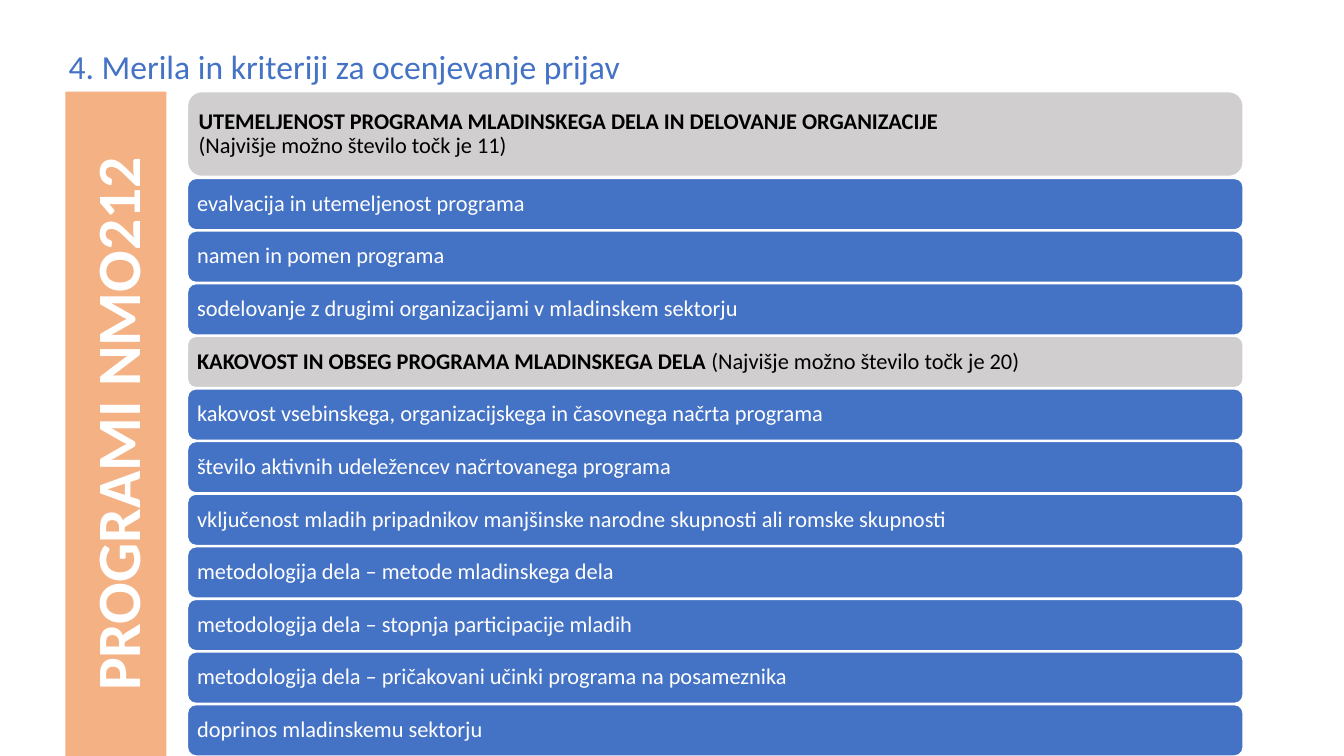
from pptx import Presentation
from pptx.dml.color import RGBColor
from pptx.enum.shapes import MSO_SHAPE
from pptx.enum.text import MSO_ANCHOR, MSO_AUTO_SIZE, PP_ALIGN
from pptx.util import Inches, Pt

RECTANGLE = MSO_SHAPE.RECTANGLE
ROUNDED = MSO_SHAPE.ROUNDED_RECTANGLE
TOP, MIDDLE = MSO_ANCHOR.TOP, MSO_ANCHOR.MIDDLE
LEFT, CENTER = PP_ALIGN.LEFT, PP_ALIGN.CENTER
NO_AUTOFIT = MSO_AUTO_SIZE.NONE

BLUE = RGBColor(0x44, 0x72, 0xC4)
GREY = RGBColor(0xD0, 0xCE, 0xCE)
ORANGE = RGBColor(0xF4, 0xB1, 0x83)
WHITE = RGBColor(0xFF, 0xFF, 0xFF)
BLACK = RGBColor(0x00, 0x00, 0x00)
FONT = "Calibri"

TITLE = "4. Merila in kriteriji za ocenjevanje prijav"
BAND = "PROGRAMI NMO212"
FIRST_HEADING = [
    [("UTEMELJENOST PROGRAMA MLADINSKEGA DELA IN DELOVANJE ORGANIZACIJE", True)],
    [("(Najvišje možno število točk je 11)", False)],
]
SECOND_HEADING = [[
    ("KAKOVOST IN OBSEG PROGRAMA MLADINSKEGA DELA ", True),
    ("(Najvišje možno število točk je 20)", False),
]]
FIRST_CRITERIA = [
    "evalvacija in utemeljenost programa",
    "namen in pomen programa",
    "sodelovanje z drugimi organizacijami v mladinskem sektorju",
]
SECOND_CRITERIA = [
    "kakovost vsebinskega, organizacijskega in časovnega načrta programa",
    "število aktivnih udeležencev načrtovanega programa",
    "vključenost mladih pripadnikov manjšinske narodne skupnosti ali romske skupnosti",
    "metodologija dela – metode mladinskega dela",
    "metodologija dela – stopnja participacije mladih",
    "metodologija dela – pričakovani učinki programa na posameznika",
    "doprinos mladinskemu sektorju",
]

BAR_HEIGHT = 0.51
FIRST_BAR_TOP, LAST_BAR_TOP = 1.77, 6.99


def style_paragraph(para, size, color, bold, align):
    """Set the alignment and shared font of a paragraph."""
    para.alignment = align
    para.font.name = FONT
    para.font.size = Pt(size)
    para.font.color.rgb = color
    para.font.bold = bold


def add_title(page):
    """Place and format the title placeholder."""
    title = page.shapes.title
    title.left, title.top = Inches(0.58), Inches(0.41)
    title.width, title.height = Inches(5.72), Inches(0.5)
    frame = title.text_frame
    frame.text = TITLE
    frame.auto_size = NO_AUTOFIT
    frame.word_wrap = False
    frame.vertical_anchor = TOP
    style_paragraph(frame.paragraphs[0], 24, BLUE, False, LEFT)


def add_box(page, preset, left, top, width, height, fill):
    """Add a filled shape without shadow or outline."""
    box = page.shapes.add_shape(
        preset, Inches(left), Inches(top), Inches(width), Inches(height))
    box.shadow.inherit = False
    box.fill.solid()
    box.fill.fore_color.rgb = fill
    box.line.fill.background()
    box.text_frame.vertical_anchor = MIDDLE
    return box


def add_band(page):
    """Add the vertical programme band."""
    band = add_box(page, RECTANGLE, 0.65, 0.91, 1, 6.59, ORANGE)
    band.text_frame.text = BAND
    band.element.txBody.bodyPr.set("vert", "vert270")
    style_paragraph(band.text_frame.paragraphs[0], 44, WHITE, True, CENTER)


def add_bar(page, top, height, lines, fill, color):
    """Add a rounded bar whose lines are lists of text and bold pairs."""
    bar = add_box(page, ROUNDED, 1.86, top, 10.47, height, fill)
    bar.line.color.rgb = WHITE
    bar.line.width = Pt(1)
    frame = bar.text_frame
    frame.word_wrap = True
    frame.margin_left = frame.margin_right = Inches(0.07)
    frame.margin_top = frame.margin_bottom = Inches(0.07)
    for index, line in enumerate(lines):
        para = frame.add_paragraph() if index else frame.paragraphs[0]
        para.line_spacing = 0.9
        for text, bold in line:
            span = para.add_run()
            span.text = text
            if len(line) > 1:
                span.font.bold = bold
        shared_bold = line[0][1] if len(line) == 1 else None
        style_paragraph(para, 16, color, shared_bold, LEFT)


def criterion_rows(criteria):
    """Turn criteria into blue bar descriptions."""
    return [([[(text, False)]], BLUE, WHITE) for text in criteria]


def main():
    """Build and save the slide."""
    deck = Presentation()
    deck.slide_width, deck.slide_height = Inches(13.33), Inches(7.5)
    page = deck.slides.add_slide(deck.slide_layouts[5])
    add_title(page)
    add_bar(page, 0.91, 0.84, FIRST_HEADING, GREY, BLACK)
    rows = (criterion_rows(FIRST_CRITERIA)
            + [(SECOND_HEADING, GREY, BLACK)]
            + criterion_rows(SECOND_CRITERIA))
    step = (LAST_BAR_TOP - FIRST_BAR_TOP) / (len(rows) - 1)
    for index, (lines, fill, color) in enumerate(rows):
        add_bar(page, FIRST_BAR_TOP + index * step, BAR_HEIGHT, lines, fill, color)
    add_band(page)
    deck.save("out.pptx")


if __name__ == "__main__":
    main()
